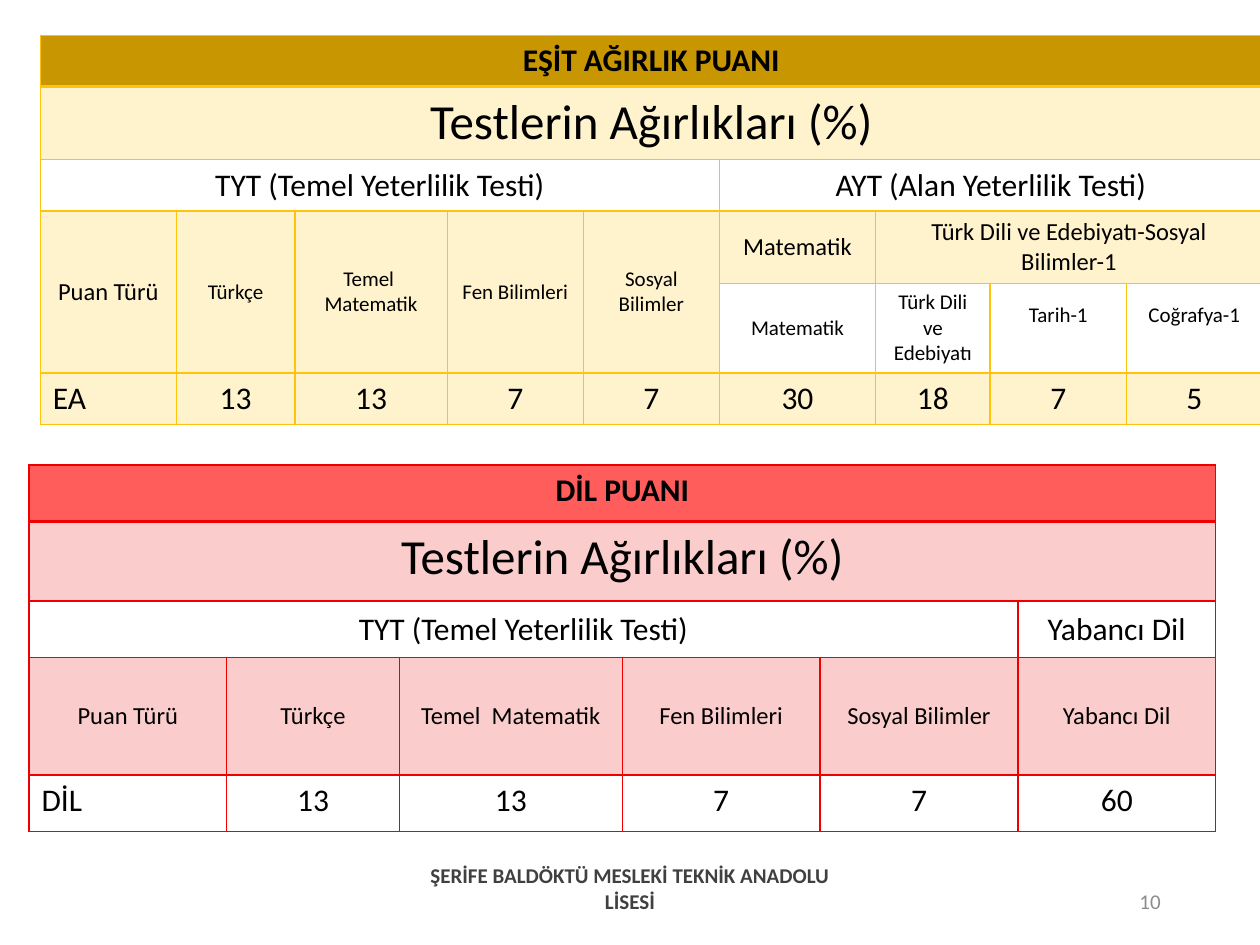
from lxml import etree
from pptx import Presentation
from pptx.dml.color import RGBColor
from pptx.enum.text import MSO_ANCHOR, PP_ALIGN
from pptx.oxml.ns import qn
from pptx.util import Inches, Pt

LEFT, MID, RIGHT = PP_ALIGN.LEFT, PP_ALIGN.CENTER, PP_ALIGN.RIGHT
TOP, CENTRE = MSO_ANCHOR.TOP, MSO_ANCHOR.MIDDLE
BLANK = 6

THEME = {
    "font": "Calibri", "ink": "000000", "foot": "404040", "page": "8C8C8C",
    "gold": "FFC30B", "gold_head": "C89600",
    "red": "EF0000", "red_head": "FF5C5C",
    "big": 28, "body": 18, "label": 14, "small": 12,
    "tint": 20, "line": 1, "heavy": 2, "raise": 0.25,
}

WEIGHTS = "Testlerin Ağırlıkları (%)"
TYT = "TYT (Temel Yeterlilik Testi)"
TESTS = ["Türkçe", "Temel  Matematik", "Fen Bilimleri", "Sosyal Bilimler"]


def item(text, size="body", fill=None, wide=1, tall=1, **form):
    return {"text": text, "size": size, "fill": fill, "wide": wide,
            "tall": tall, **form}


def head(text, wide):
    """The two full-width rows that open each score table."""
    return [
        (0, [item(text, fill="head", wide=wide, bold=True, anchor=TOP)]),
        (0, [item(WEIGHTS, "big", "tint", wide, anchor=TOP)]),
    ]


def scores(name, marks, fill=None):
    first = item(name, fill=fill, align=LEFT, anchor=TOP)
    return (0, [first] + [item(str(m), fill=fill, anchor=TOP) for m in marks])


def write(frame, text, size, color="ink", bold=False, align=MID):
    para = frame.paragraphs[0]
    para.alignment = align
    run = para.add_run()
    run.text = text
    form = {"name": THEME["font"], "size": Pt(THEME[size]), "bold": bold}
    for key, value in form.items():
        setattr(run.font, key, value)
    run.font.color.rgb = RGBColor.from_string(THEME[color])


def paint(cell, hue, kind):
    """Fill a cell with the head colour, a clear tint of the hue, or nothing."""
    if kind is None:
        cell.fill.background()
        return
    cell.fill.solid()
    name = hue + "_head" if kind == "head" else hue
    cell.fill.fore_color.rgb = RGBColor.from_string(THEME[name])
    if kind == "tint":
        tone = next(cell._tc.tcPr.iter(qn("a:srgbClr")))
        etree.SubElement(tone, qn("a:alpha"), val=str(THEME["tint"] * 1000))


def border(cell, hue, row):
    """Draw all four edges; the one under the head row is heavy."""
    props = cell._tc.get_or_add_tcPr()
    for spot, side in enumerate("LRTB"):
        heavy = (row, side) in ((0, "B"), (1, "T"))
        width = Pt(THEME["heavy" if heavy else "line"])
        line = etree.Element(qn("a:ln" + side), w=str(width))
        solid = etree.SubElement(line, qn("a:solidFill"))
        etree.SubElement(solid, qn("a:srgbClr"), val=THEME[hue])
        props.insert(spot, line)


def grid(slide, box, cols, rows, hue, data):
    frame = slide.shapes.add_table(len(rows), len(cols), *map(Inches, box))
    table = frame.table
    table.first_row = table.horz_banding = False
    for col, width in zip(table.columns, cols):
        col.width = Inches(width)
    for row, height in zip(table.rows, rows):
        row.height = Inches(height)
    frame.height = Inches(box[3])
    for r, (c, items) in enumerate(data):
        for it in items:
            cell = table.cell(r, c)
            if it["wide"] * it["tall"] > 1:
                cell.merge(table.cell(r + it["tall"] - 1, c + it["wide"] - 1))
            write(cell.text_frame, it["text"], it["size"],
                  bold=it.get("bold", False), align=it.get("align", MID))
            cell.vertical_anchor = it.get("anchor", CENTRE)
            if it.get("lift"):
                cell.margin_bottom = Inches(THEME["raise"])
            paint(cell, hue, it["fill"])
            c += it["wide"]
    for r in range(len(rows)):
        for c in range(len(cols)):
            border(table.cell(r, c), hue, r)


def note(slide, box, text, color, lift=False, **form):
    frame = slide.shapes.add_textbox(*map(Inches, box)).text_frame
    frame.word_wrap = True
    frame.vertical_anchor = CENTRE
    if lift:
        frame.margin_bottom = Inches(THEME["raise"])
    write(frame, text, "small", color, **form)


def language(slide):
    labels = ["Puan Türü", *TESTS, "Yabancı Dil"]
    data = head("DİL PUANI", 6) + [
        (0, [item(TYT, wide=5), item("Yabancı Dil")]),
        (0, [item(t, "label", "tint") for t in labels]),
        scores("DİL", [13, 13, 7, 7, 60]),
    ]
    grid(slide, (0.23, 3.69, 9.4, 2.92),
         [1.57, 1.37, 1.77, 1.57, 1.57, 1.57],
         [0.45, 0.63, 0.45, 0.93, 0.45], "red", data)


def equal(slide):
    data = head("EŞİT AĞIRLIK PUANI", 9) + [
        (0, [item(TYT, wide=5), item("AYT (Alan Yeterlilik Testi)", wide=4)]),
        (0, [item("Puan Türü", "label", "tint", tall=2)]
            + [item(t, "small", "tint", tall=2) for t in TESTS]
            + [item("Matematik", "label", "tint"),
               item("Türk Dili ve Edebiyatı-Sosyal Bilimler-1",
                    "label", "tint", 3)]),
        (5, [item("Matematik", "small"),
             item("Türk Dili ve Edebiyatı", "small"),
             item("Tarih-1", "small", lift=True),
             item("Coğrafya-1", "small", lift=True)]),
        scores("EA", [13, 13, 7, 7, 30, 18, 7, 5], "tint"),
    ]
    grid(slide, (0.32, 0.28, 9.68, 3.05),
         [1.08, 0.94, 1.21, 1.08, 1.08, 1.24, 0.91, 1.08, 1.08],
         [0.41] * 6, "gold", data)


def main():
    deck = Presentation()
    deck.slide_width, deck.slide_height = Inches(10), Inches(7.5)
    slide = deck.slides.add_slide(deck.slide_layouts[BLANK])
    language(slide)
    equal(slide)
    note(slide, (3.31, 6.95, 3.38, 0.4),
         "ŞERİFE BALDÖKTÜ MESLEKİ TEKNİK ANADOLU LİSESİ",
         "foot", lift=True, bold=True)
    note(slide, (7.06, 6.95, 2.25, 0.4), "10", "page", align=RIGHT)
    deck.save("out.pptx")


if __name__ == "__main__":
    main()
